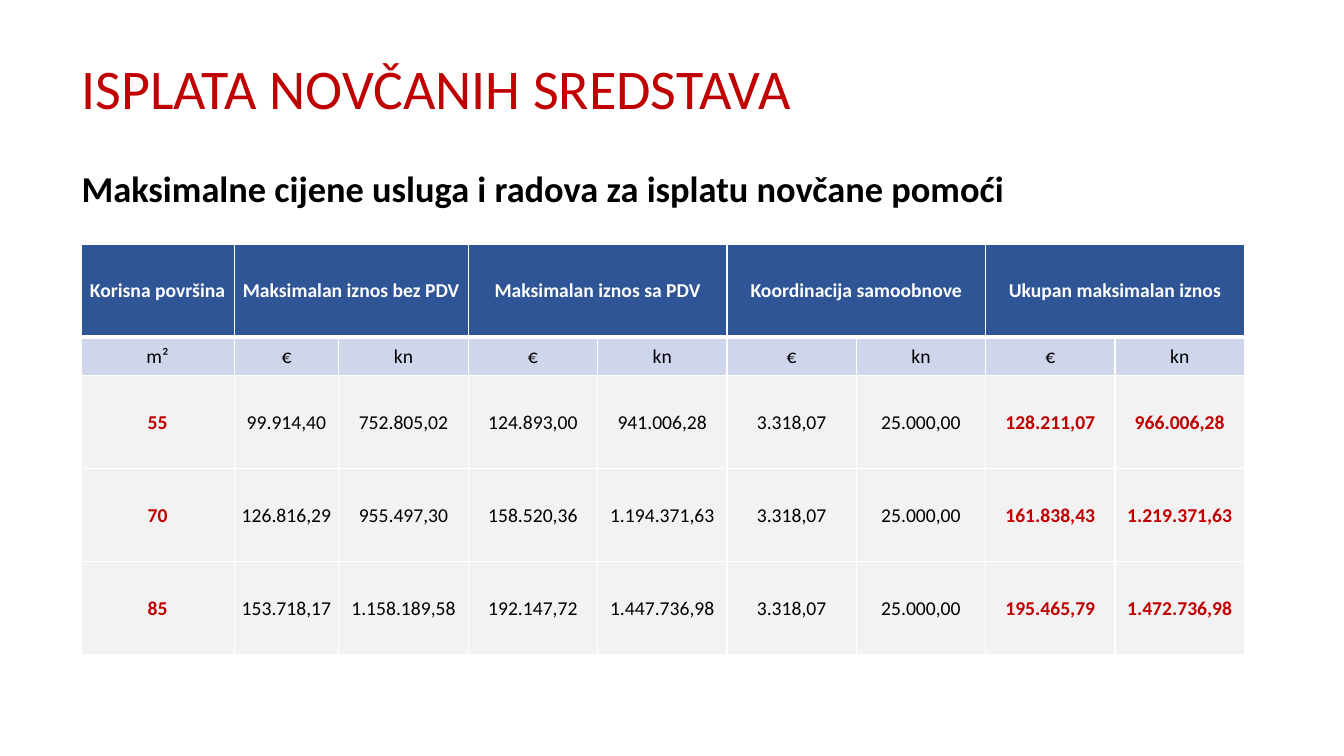
from lxml.etree import SubElement
from pptx import Presentation
from pptx.dml.color import RGBColor
from pptx.enum.text import MSO_ANCHOR as Anchor, MSO_AUTO_SIZE as AutoSize, PP_ALIGN as Align
from pptx.oxml.ns import qn
from pptx.util import Cm, Pt

FONT = "Calibri"
RED, BLACK, WHITE = "C00000", "000000", "FFFFFF"
BLUE, PALE_BLUE, GREY = "2F5597", "CFD5EA", "F2F2F2"

COLUMN_WIDTHS = [3.86, 2.64] + [3.26] * 7
ROW_HEIGHTS = [2.34, 0.98] + [2.34] * 3
AREA_HEADING = "Korisna površina"
AMOUNT_HEADINGS = ["Maksimalan iznos bez PDV", "Maksimalan iznos sa PDV",
                   "Koordinacija samoobnove", "Ukupan maksimalan iznos"]
UNITS = ["m²"] + ["€", "kn"] * len(AMOUNT_HEADINGS)
PRICES = [
    ["55", "99.914,40", "752.805,02", "124.893,00", "941.006,28",
     "3.318,07", "25.000,00", "128.211,07", "966.006,28"],
    ["70", "126.816,29", "955.497,30", "158.520,36", "1.194.371,63",
     "3.318,07", "25.000,00", "161.838,43", "1.219.371,63"],
    ["85", "153.718,17", "1.158.189,58", "192.147,72", "1.447.736,98",
     "3.318,07", "25.000,00", "195.465,79", "1.472.736,98"],
]


def color(value):
    return RGBColor.from_string(value)


def format_para(para, size, text_color, bold, align):
    para.alignment = align
    for span in para.runs:
        span.font.name = FONT
        span.font.size = Pt(size)
        span.font.bold = bold
        span.font.color.rgb = color(text_color)


def fill_placeholder(shape, box, text, size, text_color, bold, align):
    shape.left, shape.top, shape.width, shape.height = (Cm(value) for value in box)
    frame = shape.text_frame
    frame.text = text
    frame.word_wrap = True
    frame.auto_size = AutoSize.NONE
    frame.vertical_anchor = Anchor.MIDDLE
    para = frame.paragraphs[0]
    properties = para._p.get_or_add_pPr()
    properties.set("marL", "0")
    properties.set("indent", "0")
    SubElement(properties, qn("a:buNone"))
    para.space_before = Pt(0)
    format_para(para, size, text_color, bold, align)


def add_headings(slide, left, top, width):
    # Title
    fill_placeholder(slide.shapes.title, (left, top, width, 1.98),
                     "ISPLATA NOVČANIH SREDSTAVA", 40, RED, False, Align.LEFT)
    # Subtitle
    fill_placeholder(slide.placeholders[1], (left, top + 2.85, width, 1.38),
                     "Maksimalne cijene usluga i radova za isplatu novčane pomoći",
                     26, BLACK, True, Align.JUSTIFY)


def set_borders(cell, top=1, bottom=1):
    properties = cell._tc.get_or_add_tcPr()
    for side, width in (("L", 1), ("R", 1), ("T", top), ("B", bottom)):
        line = SubElement(properties, qn(f"a:ln{side}"), w=str(Pt(width)))
        solid = SubElement(line, qn("a:solidFill"))
        SubElement(solid, qn("a:srgbClr"), val=WHITE)


def format_cell(cell, row, column):
    # The rule under the header is thicker than the others
    set_borders(cell, top=3 if row == 1 else 1, bottom=3 if row == 0 else 1)
    cell.fill.solid()
    cell.fill.fore_color.rgb = color({0: BLUE, 1: PALE_BLUE}.get(row, GREY))
    cell.margin_left = cell.margin_right = cell.margin_top = Cm(0.02)
    cell.margin_bottom = 0
    cell.vertical_anchor = Anchor.MIDDLE

    # Areas and totals stand out in red
    highlighted = row > 1 and column in (0, 7, 8)
    text_color = WHITE if row == 0 else RED if highlighted else BLACK
    format_para(cell.text_frame.paragraphs[0], 14, text_color,
                row == 0 or highlighted, Align.CENTER)


def add_price_table(slide, left, top):
    frame = slide.shapes.add_table(
        len(ROW_HEIGHTS), len(COLUMN_WIDTHS), Cm(left), Cm(top),
        Cm(sum(COLUMN_WIDTHS)), Cm(sum(ROW_HEIGHTS)))
    table = frame.table
    table.horz_banding = False
    for column, width in zip(table.columns, COLUMN_WIDTHS):
        column.width = Cm(width)
    for row, height in zip(table.rows, ROW_HEIGHTS):
        row.height = Cm(height)

    # Each amount heading spans a euro and a kuna column
    header = [AREA_HEADING]
    for index, heading in enumerate(AMOUNT_HEADINGS):
        header += [heading, ""]
        first = 1 + 2 * index
        table.cell(0, first).merge(table.cell(0, first + 1))

    for row, texts in enumerate([header, UNITS] + PRICES):
        for column, text in enumerate(texts):
            cell = table.cell(row, column)
            if text:
                cell.text_frame.text = text
            format_cell(cell, row, column)


def main():
    deck = Presentation()
    deck.slide_width, deck.slide_height = Cm(33.87), Cm(19.05)
    slide = deck.slides.add_slide(deck.slide_layouts[1])
    add_headings(slide, 1.8, 1.2, 30.66)
    add_price_table(slide, 2.04, 6.15)
    deck.save("out.pptx")


if __name__ == "__main__":
    main()
